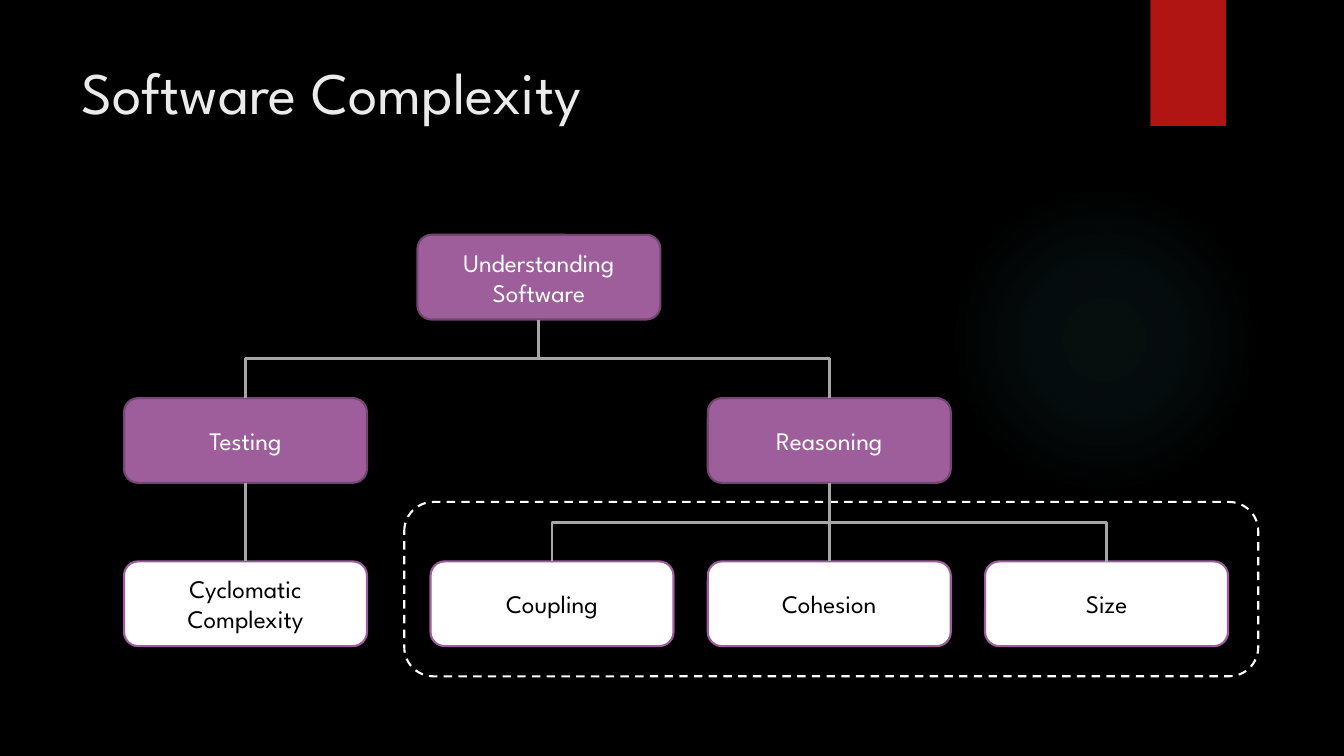
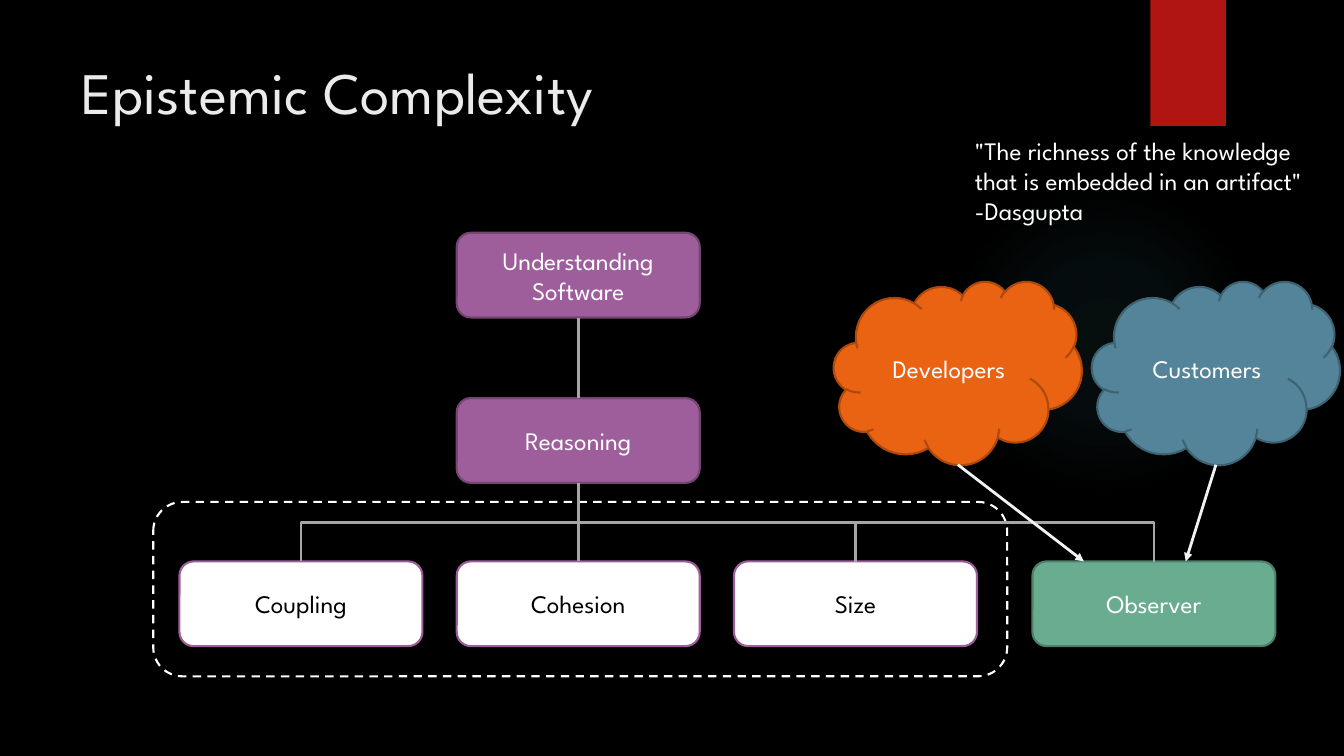
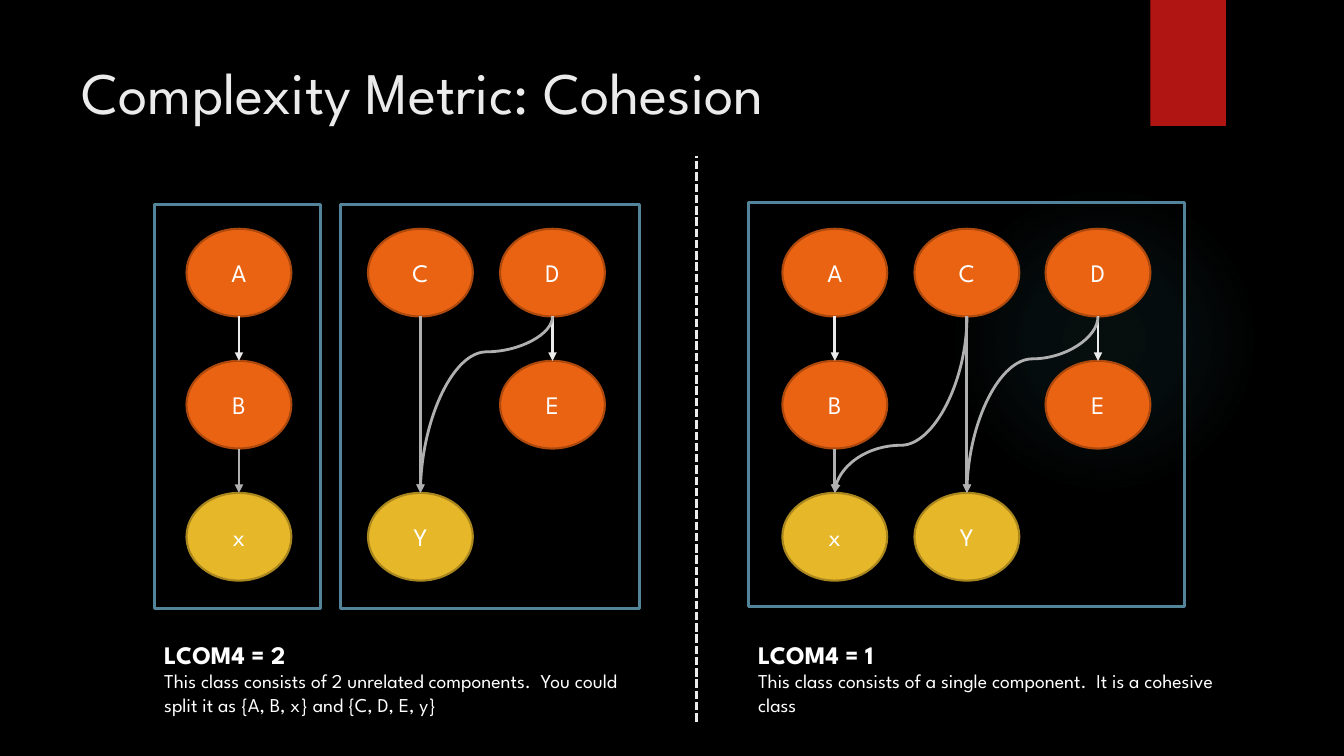
import lxml.etree
import pptx
import pptx.dml.color
import pptx.enum.dml
import pptx.enum.shapes
import pptx.enum.text
import pptx.oxml.ns
import pptx.util


class Theme:
    font = "League Spartan"
    title_size, body_size, small_size = 42, 18, 14
    background, white, title = "000000", "FFFFFF", "EBEBEB"
    band, glow = "B01513", "50B9C1"
    branch, arrow, pale_arrow, light_arrow = "A6A6A6", "B0B0B0", "EBEBEB", "F2F2F2"
    frame = "54849A"
    # fill, line, text
    purple = ("9E5E9B", "754673", "FFFFFF")
    paper = ("FFFFFF", "9E5E9B", "000000")
    green = ("6AAC90", "4E7F6B", "FFFFFF")
    orange = ("EA6312", "AD490D", "FFFFFF")
    blue = ("54849A", "3E6272", "FFFFFF")
    yellow = ("E6B729", "AA871E", "FFFFFF")
    box_line, link_line = 1.5, 2


rgb = pptx.dml.color.RGBColor.from_string
qn = pptx.oxml.ns.qn
Inches = pptx.util.Inches
SHAPE = pptx.enum.shapes.MSO_SHAPE
CONNECTOR = pptx.enum.shapes.MSO_CONNECTOR
DASH = pptx.enum.dml.MSO_LINE


def box(s, kind, at, style, label="", width=Theme.box_line, dash=None):
    """Add a shape whose style is (fill, line, text); None means no paint."""
    fill, line, color = style
    sp = s.shapes.add_shape(kind, *map(Inches, at))
    sp.shadow.inherit = False
    for paint, value in ((sp.fill, fill), (sp.line.fill, line)):
        if value:
            paint.solid()
            paint.fore_color.rgb = rgb(value)
        else:
            paint.background()
    if line:
        sp.line.width = pptx.util.Pt(width)
        sp.line.dash_style = dash
    if label:
        tf = sp.text_frame
        tf.word_wrap = True
        tf.vertical_anchor = pptx.enum.text.MSO_ANCHOR.MIDDLE
        p = tf.paragraphs[0]
        p.alignment = pptx.enum.text.PP_ALIGN.CENTER
        r = p.add_run()
        r.text = label
        r.font.name = Theme.font
        r.font.size = pptx.util.Pt(Theme.body_size)
        r.font.color.rgb = rgb(color)
    return sp


def link(s, start, end, color, kind=CONNECTOR.STRAIGHT, bend=0.5, arrow=True, dash=None):
    """Join two points; elbows and curves leave downwards from the start."""
    (x1, y1), (x2, y2) = start, end
    turned = kind != CONNECTOR.STRAIGHT and abs(x1 - x2) > 0.01
    if turned:
        # A quarter turn makes the connector run vertically first
        mid_x, mid_y = (x1 + x2) / 2, (y1 + y2) / 2
        half_w, half_h = (y2 - y1) / 2, (x1 - x2) / 2
        x1, y1, x2, y2 = mid_x - half_w, mid_y - half_h, mid_x + half_w, mid_y + half_h
    else:
        kind = CONNECTOR.STRAIGHT
    c = s.shapes.add_connector(kind, *map(Inches, (x1, y1, x2, y2)))
    c.line.color.rgb = rgb(color)
    c.line.width = pptx.util.Pt(Theme.link_line)
    c.line.dash_style = dash
    sp_pr = c._element.spPr
    if turned:
        sp_pr.find(qn("a:xfrm")).set("rot", "5400000")
        guides = sp_pr.find(qn("a:prstGeom")).find(qn("a:avLst"))
        lxml.etree.SubElement(guides, qn("a:gd"), name="adj1", fmla=f"val {round(bend * 100000)}")
    if arrow:
        lxml.etree.SubElement(sp_pr.find(qn("a:ln")), qn("a:tailEnd"), type="triangle")
    lxml.etree.SubElement(sp_pr, qn("a:effectLst"))


prs = pptx.Presentation()
prs.slide_width, prs.slide_height = Inches(13.33), Inches(7.5)
prs.slide_master.background.fill.solid()
prs.slide_master.background.fill.fore_color.rgb = rgb(Theme.background)

# Shared parts: soft glow and red band
slides = []
for _ in range(3):
    s = prs.slides.add_slide(prs.slide_layouts[6])
    slides.append(s)
    glow = box(s, SHAPE.OVAL, (9.41, 1.83, 3.08, 3.08), (None, None, None))
    no_fill = glow._element.spPr.find(qn("a:noFill"))
    grad = lxml.etree.Element(qn("a:gradFill"))
    stops = lxml.etree.SubElement(grad, qn("a:gsLst"))
    for position, alpha in ((0, 7), (36, 6), (69, 0)):
        stop = lxml.etree.SubElement(stops, qn("a:gs"), pos=str(position * 1000))
        color = lxml.etree.SubElement(stop, qn("a:srgbClr"), val=Theme.glow)
        lxml.etree.SubElement(color, qn("a:alpha"), val=str(alpha * 1000))
    circle = lxml.etree.SubElement(grad, qn("a:path"), path="circle")
    lxml.etree.SubElement(circle, qn("a:fillToRect"), l="50000", t="50000", r="50000", b="50000")
    no_fill.getparent().replace(no_fill, grad)
    box(s, SHAPE.RECTANGLE, (11.41, 0, 0.75, 1.25), (Theme.band, None, None))
tree_slide, observer_slide, cohesion_slide = slides

# Complexity trees: nodes as (label, left, top, style), links as (parent, child)
BOX_W, BOX_H, COLUMN_STEP = 2.41, 0.84, 2.75
MIDDLE_ROW, BOTTOM_ROW = 3.95, 5.57
trees = [
    (tree_slide, 4.27,
     [("Understanding Software", 4.14, 2.33, Theme.purple),
      ("Testing", 1.23, MIDDLE_ROW, Theme.purple),
      ("Cyclomatic Complexity", 1.23, BOTTOM_ROW, Theme.paper)],
     [("Understanding Software", "Testing"), ("Testing", "Cyclomatic Complexity")]),
    (observer_slide, 1.78,
     [("Understanding Software", 4.53, 2.31, Theme.purple),
      ("Observer", 10.24, BOTTOM_ROW, Theme.green)],
     [("Reasoning", "Observer")]),
]
metrics = ("Coupling", "Cohesion", "Size")
for s, first_left, nodes, links in trees:
    nodes = nodes + [("Reasoning", first_left + COLUMN_STEP, MIDDLE_ROW, Theme.purple)]
    nodes += [(metric, first_left + i * COLUMN_STEP, BOTTOM_ROW, Theme.paper)
              for i, metric in enumerate(metrics)]
    links = links + [("Understanding Software", "Reasoning")]
    links += [("Reasoning", metric) for metric in metrics]
    corners = {}
    for label, left, top, style in nodes:
        box(s, SHAPE.ROUNDED_RECTANGLE, (left, top, BOX_W, BOX_H), style, label)
        corners[label] = (left, top)
    box(s, SHAPE.ROUNDED_RECTANGLE, (first_left - 0.26, 4.98, 8.47, 1.73),
        (None, Theme.white, None), dash=DASH.DASH)
    for parent, child in links:
        (left, top), (child_left, child_top) = corners[parent], corners[child]
        link(s, (left + BOX_W / 2, top + BOX_H), (child_left + BOX_W / 2, child_top),
             Theme.branch, CONNECTOR.ELBOW, arrow=False)

# Observer groups
for label, left, style, target in (("Developers", 8.27, Theme.orange, 10.75),
                                   ("Customers", 10.83, Theme.blue, 11.76)):
    box(observer_slide, SHAPE.CLOUD, (left, 2.79, 2.46, 1.82), style, label)
    link(observer_slide, (left + 1.23, 4.61), (target, BOTTOM_ROW), Theme.light_arrow)

# Cohesion graphs: members as (column, row, style)
s = cohesion_slide
OVAL_W, OVAL_H, ROW_TOP, ROW_STEP = 1.04, 0.87, 2.27, 1.31
members = {"A": (0, 0, Theme.orange), "B": (0, 1, Theme.orange), "x": (0, 2, Theme.yellow),
           "C": (1, 0, Theme.orange), "D": (2, 0, Theme.orange), "E": (2, 1, Theme.orange),
           "Y": (1, 2, Theme.yellow)}
calls = [("A", "B", Theme.pale_arrow), ("B", "x", Theme.arrow),
         ("C", "Y", Theme.arrow), ("D", "E", Theme.pale_arrow)]
graphs = [((1.85, 3.65, 4.96), {("D", "Y"): 0.2}),
          ((7.76, 9.07, 10.37), {("D", "Y"): 0.24, ("C", "x"): 0.73})]
for columns, curves in graphs:
    corners = {}
    for label, (column, row, style) in members.items():
        corners[label] = (columns[column], ROW_TOP + row * ROW_STEP)
        box(s, SHAPE.OVAL, (*corners[label], OVAL_W, OVAL_H), style, label)
    curved_calls = [(*pair, Theme.arrow) for pair in curves]
    for caller, callee, color in calls + curved_calls:
        (left, top), (end_left, end_top) = corners[caller], corners[callee]
        link(s, (left + OVAL_W / 2, top + OVAL_H), (end_left + OVAL_W / 2, end_top),
             color, CONNECTOR.CURVE, curves.get((caller, callee), 0.5))

# Component frames and divider
for left, top, width in ((1.53, 2.03, 1.65), (3.38, 2.03, 2.96), (7.42, 2.01, 4.33)):
    box(s, SHAPE.RECTANGLE, (left, top, width, 4.01), (None, Theme.frame, None),
        width=Theme.link_line)
link(s, (6.91, 7.16), (6.91, 1.55), Theme.pale_arrow, arrow=False, dash=DASH.SQUARE_DOT)

# Titles, quote and captions: paragraphs as (text, size, bold)
TITLE_AT = (0.71, 0.5, 10.29, 1.53)
body, small = Theme.body_size, Theme.small_size
texts = [(slide, TITLE_AT, Theme.title, [(title, Theme.title_size, False)])
         for slide, title in zip(slides, ("Software Complexity", "Epistemic Complexity",
                                          "Complexity Metric: Cohesion"))]
texts += [
    (observer_slide, (9.57, 1.29, 3.45, 1.31), Theme.white,
     [('"The richness of the knowledge that is embedded in an artifact"', body, False),
      ("-Dasgupta", body, False)]),
    (cohesion_slide, (1.53, 6.29, 4.81, 0.88), Theme.white,
     [("LCOM4 = 2", body, True),
      ("This class consists of 2 unrelated components.  You could split it as "
       "{A, B, x} and {C, D, E, y}", small, False)]),
    (cohesion_slide, (7.42, 6.29, 4.81, 0.88), Theme.white,
     [("LCOM4 = 1", body, True),
      ("This class consists of a single component.  It is a cohesive class", small, False)]),
]
for s, at, color, paragraphs in texts:
    tf = s.shapes.add_textbox(*map(Inches, at)).text_frame
    tf.word_wrap = True
    for i, (text, size, bold) in enumerate(paragraphs):
        p = tf.add_paragraph() if i else tf.paragraphs[0]
        r = p.add_run()
        r.text = text
        r.font.name = Theme.font
        r.font.size = pptx.util.Pt(size)
        r.font.bold = bold
        r.font.color.rgb = rgb(color)

prs.save("out.pptx")
